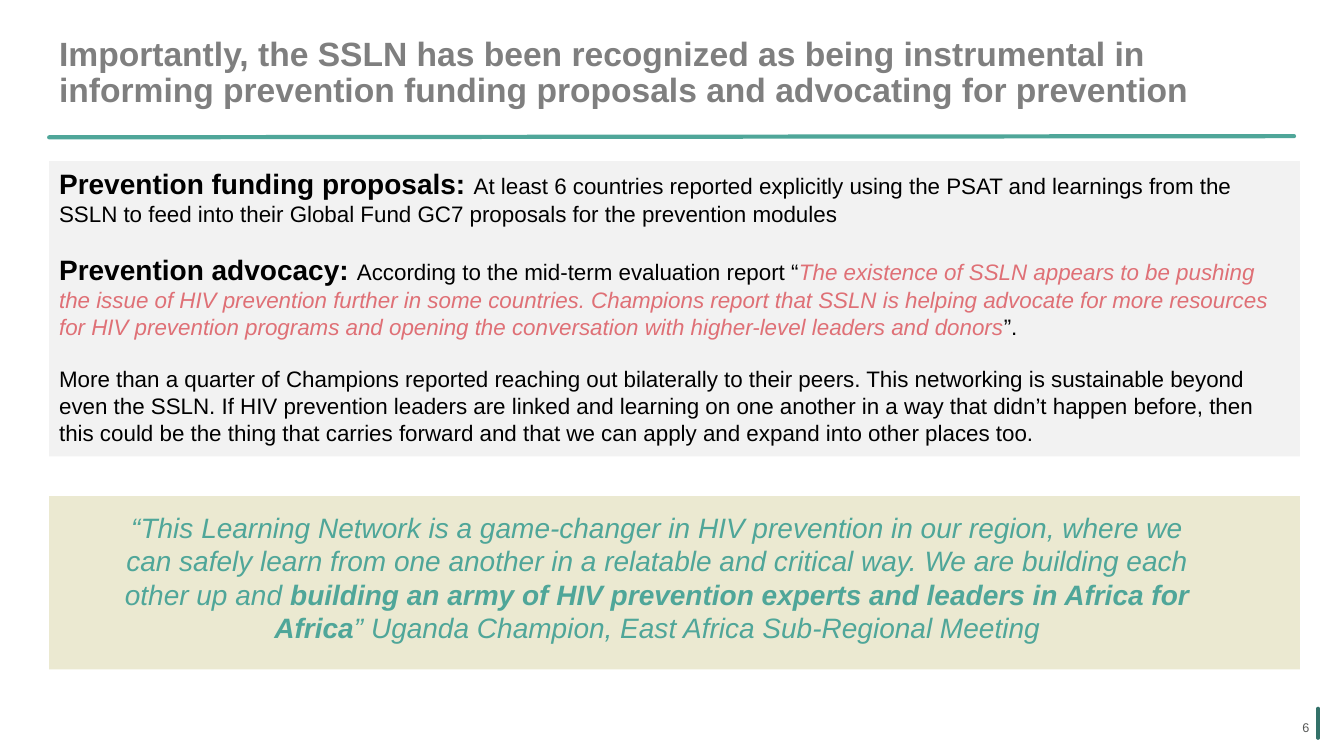
from lxml import etree
from pptx import Presentation
from pptx.dml.color import RGBColor
from pptx.enum.dml import MSO_LINE_DASH_STYLE as Dash
from pptx.enum.shapes import MSO_CONNECTOR, MSO_SHAPE
from pptx.enum.text import MSO_ANCHOR, PP_ALIGN
from pptx.oxml.ns import qn
from pptx.util import Cm, Pt

COLORS = {
    "title": "7F7F7F",
    "teal": "4FA699",
    "dark teal": "337169",
    "dotted teal": "337269",
    "text": "000000",
    "report quote": "DF7076",
    "findings panel": "F2F2F2",
    "quote panel": "EBE9D1",
    "page number": "585958",
}
LEFT, PANEL_WIDTH = Cm(1.24), Cm(31.52)

prs = Presentation()
prs.slide_width, prs.slide_height = Cm(33.87), Cm(19.05)
slide = prs.slides.add_slide(prs.slide_layouts[6])
shapes = slide.shapes


def add_runs(paragraph, runs):
    """Append runs given as (text, size, color name, bold, italic)."""
    for text, size, color, bold, italic in runs:
        run = paragraph.add_run()
        run.text = text
        font = run.font
        font.name, font.size = "Arial", Pt(size)
        font.bold, font.italic = bold, italic
        font.color.rgb = RGBColor.from_string(COLORS[color])


def add_panel(top, height, color):
    panel = shapes.add_shape(MSO_SHAPE.RECTANGLE, LEFT, Cm(top), PANEL_WIDTH, Cm(height))
    panel.shadow.inherit = False
    panel.fill.solid()
    panel.fill.fore_color.rgb = RGBColor.from_string(COLORS[color])
    panel.line.fill.background()
    return panel


# Title rule and the accent beside the page number
for x1, y1, x2, y2, color, dash in [
    (33.22, 18.59, 33.22, 17.88, "dark teal", None),
    (33.22, 18.57, 33.22, 17.86, "dark teal", None),
    (1.24, 3.46, 32.61, 3.43, "teal", None),
    (33.22, 18.57, 33.22, 17.86, "dotted teal", Dash.ROUND_DOT),
]:
    rule = shapes.add_connector(MSO_CONNECTOR.STRAIGHT, Cm(x1), Cm(y1), Cm(x2), Cm(y2))
    rule.line.color.rgb = RGBColor.from_string(COLORS[color])
    rule.line.width = Pt(3)
    if dash:
        rule.line.dash_style = dash
    properties = rule._element.spPr
    properties.find(qn("a:ln")).set("cap", "rnd")
    etree.SubElement(properties, qn("a:effectLst"))

add_panel(12.5, 4.37, "quote panel")

# Page number
page_number = shapes.add_textbox(Cm(28.55), Cm(17.81), Cm(4.7), Cm(1.02)).text_frame
page_number.word_wrap = True
page_number.vertical_anchor = MSO_ANCHOR.MIDDLE
page_number.paragraphs[0].alignment = PP_ALIGN.RIGHT
add_runs(page_number.paragraphs[0], [("6", 9, "page number", False, False)])

# Title
title = shapes.add_textbox(LEFT, Cm(0.66), Cm(32), Cm(2.39)).text_frame
title.word_wrap = True
title.vertical_anchor = MSO_ANCHOR.MIDDLE
title.paragraphs[0].line_spacing = 0.9
add_runs(title.paragraphs[0], [
    ("Importantly, the SSLN has been recognized as being instrumental in informing "
     "prevention funding proposals and advocating for prevention", 24, "title", True, False),
])

# Findings
findings = add_panel(4.06, 7.44, "findings panel").text_frame
findings.word_wrap = True
findings.vertical_anchor = MSO_ANCHOR.TOP
finding_runs = [
    [
        ("Prevention funding proposals: ", 20, "text", True, False),
        ("At least 6 countries reported explicitly using the PSAT and learnings from the SSLN "
         "to feed into their Global Fund GC7 proposals for the prevention modules",
         16, "text", False, False),
    ],
    [
        ("Prevention advocacy: ", 20, "text", True, False),
        ("According to the mid-term evaluation report “", 16, "text", False, False),
        ("The existence of SSLN appears to be pushing the issue of HIV prevention further in "
         "some countries. Champions report that SSLN is helping advocate for more resources for "
         "HIV prevention programs and opening the conversation with higher-level leaders and "
         "donors", 16, "report quote", False, True),
        ("”.", 16, "text", False, False),
    ],
    [
        ("More than a quarter of Champions reported reaching out bilaterally to their peers. "
         "This networking is sustainable beyond even the SSLN. If HIV prevention leaders are "
         "linked and learning on one another in a way that didn’t happen before, then this could "
         "be the thing that carries forward and that we can apply and expand into other places "
         "too.", 16, "text", False, False),
    ],
]
for index, runs in enumerate(finding_runs):
    finding = findings.add_paragraph() if index else findings.paragraphs[0]
    finding.alignment = PP_ALIGN.LEFT
    if index:
        finding.space_before = Pt(18.4)
    add_runs(finding, runs)

# Champion's quote
champion_quote = shapes.add_textbox(Cm(2.64), Cm(12.73), Cm(27.86), Cm(4.52)).text_frame
champion_quote.word_wrap = True
champion_quote.paragraphs[0].alignment = PP_ALIGN.CENTER
add_runs(champion_quote.paragraphs[0], [
    ("“This Learning Network is a game-changer in HIV prevention in our region, where we can "
     "safely learn from one another in a relatable and critical way. We are building each other "
     "up and ", 20, "teal", False, True),
    ("building an army of HIV prevention experts and leaders in Africa for Africa",
     20, "teal", True, True),
    ("” Uganda Champion, East Africa Sub-Regional Meeting", 20, "teal", False, True),
])

prs.save("out.pptx")
